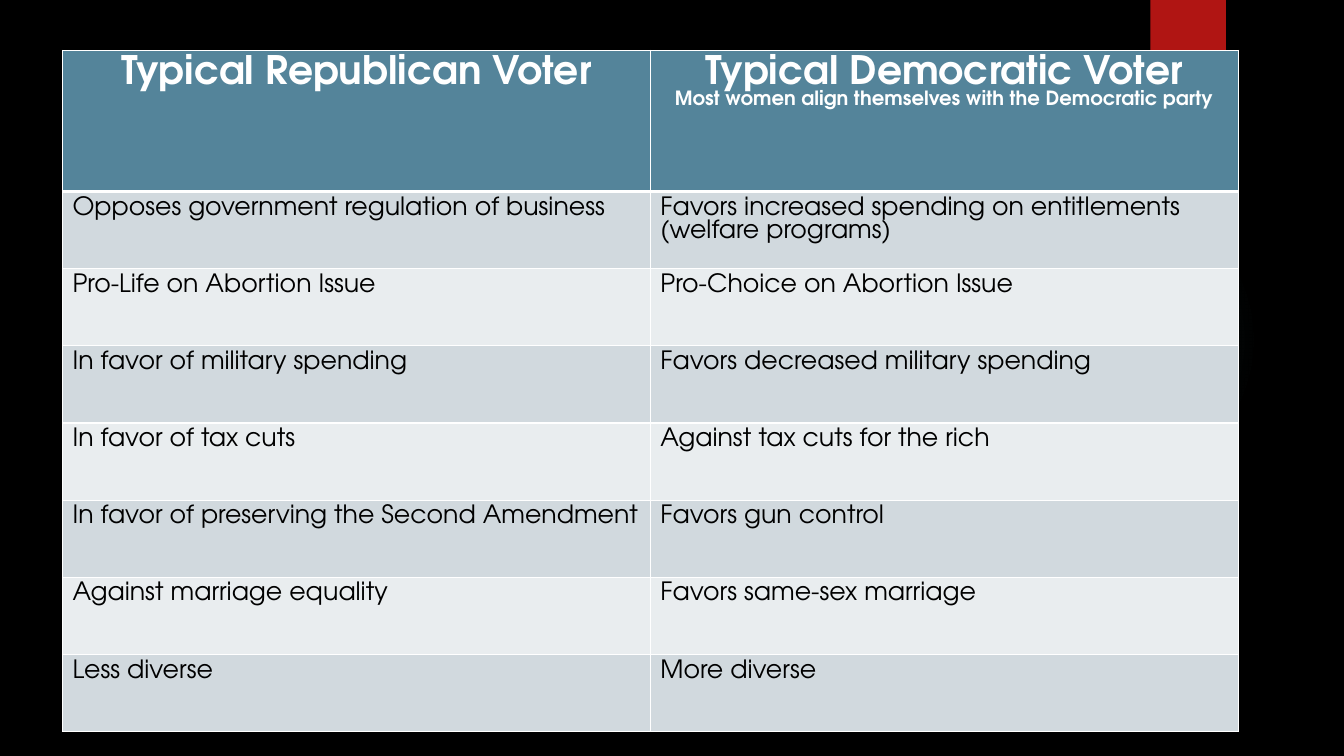
from lxml import etree
from pptx import Presentation
from pptx.dml.color import RGBColor
from pptx.enum.shapes import MSO_SHAPE
from pptx.enum.text import PP_ALIGN
from pptx.oxml import parse_xml
from pptx.oxml.ns import nsdecls, qn
from pptx.util import Inches, Pt

FONT = "TeX Gyre Adventor"
COLORS = {
    "background": "000000",
    "glow": "50B9C1",
    "ribbon": "B01513",
    "header": "54849A",
    "odd_row": "D1D9DE",
    "even_row": "E9EDEF",
    "border": "FFFFFF",
    "header_text": "FFFFFF",
    "body_text": "000000",
}

# Each heading is a list of (text, size) lines
HEADINGS = [
    [("Typical Republican Voter", 28)],
    [("Typical Democratic Voter", 28),
     ("Most women align themselves with the Democratic party", 14)],
]
POSITIONS = [
    ("Opposes government regulation of business",
     "Favors increased spending on entitlements (welfare programs)"),
    ("Pro-Life on Abortion Issue", "Pro-Choice on Abortion Issue"),
    ("In favor of military spending", "Favors decreased military spending"),
    ("In favor of tax cuts", "Against tax cuts for the rich"),
    ("In favor of preserving the Second Amendment", "Favors gun control"),
    ("Against marriage equality", "Favors same-sex marriage"),
    ("Less diverse", "More diverse"),
]


def color(name):
    return RGBColor.from_string(COLORS[name])


def add_plain_shape(slide, preset, box):
    shape = slide.shapes.add_shape(preset, *map(Inches, box))
    shape.shadow.inherit = False
    shape.line.fill.background()
    return shape


def add_glow(slide, box):
    """Faint round light that fades out towards its edge."""
    glow = add_plain_shape(slide, MSO_SHAPE.OVAL, box)
    stops = "".join(
        f'<a:gs pos="{position * 1000}"><a:srgbClr val="{COLORS["glow"]}">'
        f'<a:alpha val="{alpha * 1000}"/></a:srgbClr></a:gs>'
        for position, alpha in ((0, 7), (36, 6), (69, 0)))
    gradient = parse_xml(
        f'<a:gradFill {nsdecls("a")}><a:gsLst>{stops}</a:gsLst>'
        '<a:path path="circle"><a:fillToRect l="50000" t="50000" '
        'r="50000" b="50000"/></a:path></a:gradFill>')
    glow.element.spPr.find(qn("a:prstGeom")).addnext(gradient)


def add_ribbon(slide, box):
    ribbon = add_plain_shape(slide, MSO_SHAPE.RECTANGLE, box)
    ribbon.fill.solid()
    ribbon.fill.fore_color.rgb = color("ribbon")


def set_borders(cell, bottom, top):
    properties = cell._tc.get_or_add_tcPr()
    widths = {"lnL": 1, "lnR": 1, "lnT": top, "lnB": bottom}
    for index, (side, width) in enumerate(widths.items()):
        border = etree.Element(qn(f"a:{side}"), w=str(Pt(width)))
        fill = etree.SubElement(border, qn("a:solidFill"))
        etree.SubElement(fill, qn("a:srgbClr"), val=COLORS["border"])
        properties.insert(index, border)


def fill_cell(cell, lines, fill, text_color, bold=False, align=PP_ALIGN.LEFT):
    cell.fill.solid()
    cell.fill.fore_color.rgb = color(fill)
    frame = cell.text_frame
    frame.text = "\n".join(text for text, _ in lines)
    for paragraph, (_, size) in zip(frame.paragraphs, lines):
        paragraph.alignment = align
        paragraph.font.name = FONT
        paragraph.font.size = Pt(size)
        paragraph.font.bold = bold
        paragraph.font.color.rgb = color(text_color)


def add_voter_table(slide, box, header_height):
    left, top, width, height = map(Inches, box)
    table = slide.shapes.add_table(
        len(POSITIONS) + 1, len(HEADINGS), left, top, width, height).table
    for column in table.columns:
        column.width = width // len(HEADINGS)
    for row in table.rows:
        row.height = (height - Inches(header_height)) // len(POSITIONS)
    table.rows[0].height = Inches(header_height)

    # Header row
    for column, lines in enumerate(HEADINGS):
        cell = table.cell(0, column)
        fill_cell(cell, lines, "header", "header_text", True, PP_ALIGN.CENTER)
        set_borders(cell, bottom=3, top=1)

    # Banded rows, one issue each
    for row, pair in enumerate(POSITIONS, start=1):
        for column, text in enumerate(pair):
            cell = table.cell(row, column)
            fill_cell(cell, [(text, 18)],
                      "odd_row" if row % 2 else "even_row", "body_text")
            set_borders(cell, bottom=1, top=3 if row == 1 else 1)


def main():
    presentation = Presentation()
    presentation.slide_width = Inches(13.33)
    presentation.slide_height = Inches(7.5)
    slide = presentation.slides.add_slide(presentation.slide_layouts[6])
    slide.background.fill.solid()
    slide.background.fill.fore_color.rgb = color("background")

    add_glow(slide, (9.41, 1.83, 3.08, 3.08))
    add_ribbon(slide, (11.41, 0, 0.75, 1.25))
    add_voter_table(slide, (0.62, 0.5, 11.66, 6.76), header_height=1.4)
    presentation.save("out.pptx")


if __name__ == "__main__":
    main()
